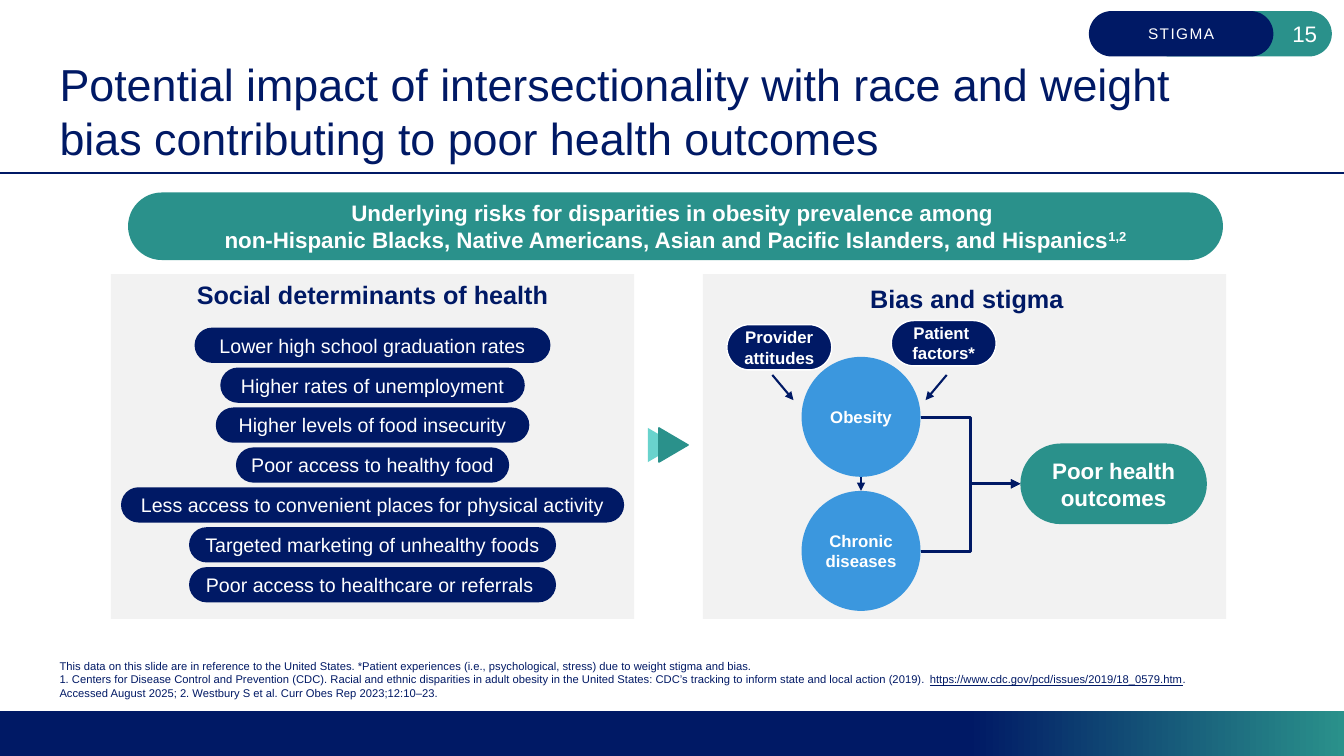
import pptx
import pptx.util
import pptx.dml.color
import pptx.enum.shapes
import pptx.enum.text
import pptx.oxml
import pptx.oxml.ns

RGBColor = pptx.dml.color.RGBColor
SHAPE = pptx.enum.shapes.MSO_SHAPE
LINE = pptx.enum.shapes.MSO_CONNECTOR
ALIGN = pptx.enum.text.PP_ALIGN
ANCHOR = pptx.enum.text.MSO_ANCHOR
Inches = pptx.util.Inches
Pt = pptx.util.Pt

NAVY = RGBColor(0x00, 0x19, 0x65)
TEAL = RGBColor(0x2A, 0x91, 0x8B)
AQUA = RGBColor(0x69, 0xD3, 0xCD)
BLUE = RGBColor(0x3B, 0x97, 0xDE)
GREY = RGBColor(0xF2, 0xF2, 0xF2)
WHITE = RGBColor(0xFF, 0xFF, 0xFF)

W, H = 13.33, 7.5
MARGIN = 0.59
PANEL_W, PANEL_H, PANEL_TOP = 5.19, 3.42, 2.72

DETERMINANTS = [
    ("Lower high school graduation rates", 3.53),
    ("Higher rates of unemployment", 3.02),
    ("Higher levels of food insecurity", 3.11),
    ("Poor access to healthy food", 2.71),
    ("Less access to convenient places for physical activity", 4.99),
    ("Targeted marketing of unhealthy foods", 3.64),
    ("Poor access to healthcare or referrals ", 3.64),
]


def inside(box, dx, dy, w, h):
    return box[0] + dx, box[1] + dy, w, h


def place(box):
    return [Inches(v) for v in box]


def format_runs(p, size, color, bold=False):
    for r in p.runs:
        r.font.name = "Arial"
        r.font.size = Pt(size)
        r.font.color.rgb = color
        r.font.bold = bold


def set_frame(tf, anchor, margins):
    tf.word_wrap = True
    tf.auto_size = pptx.enum.text.MSO_AUTO_SIZE.NONE
    tf.vertical_anchor = anchor
    tf.margin_left = tf.margin_right = Inches(margins[0])
    tf.margin_top = tf.margin_bottom = Inches(margins[1])


def add_shape(s, kind, box, fill, line=None):
    sp = s.shapes.add_shape(kind, *place(box))
    sp.shadow.inherit = False
    sp.fill.solid()
    sp.fill.fore_color.rgb = fill
    if line is None:
        sp.line.fill.background()
    else:
        sp.line.color.rgb = line
        sp.line.width = Pt(1)
    if kind == SHAPE.ROUNDED_RECTANGLE:
        sp.adjustments[0] = 0.5
    return sp


def add_label(s, kind, box, fill, text, size, bold=False, margins=(0.1, 0.05),
              align=ALIGN.CENTER, line=None):
    sp = add_shape(s, kind, box, fill, line)
    set_frame(sp.text_frame, ANCHOR.MIDDLE, margins)
    p = sp.text_frame.paragraphs[0]
    p.text = text
    p.alignment = align
    format_runs(p, size, WHITE, bold)
    return sp


def add_heading(s, box, text):
    sp = s.shapes.add_textbox(*place(box))
    set_frame(sp.text_frame, ANCHOR.TOP, (0.1, 0.05))
    p = sp.text_frame.paragraphs[0]
    p.text = text
    p.alignment = ALIGN.CENTER
    format_runs(p, 18, NAVY, True)


def add_line(s, start, end, width, kind=LINE.STRAIGHT, arrow=True):
    cx = s.shapes.add_connector(kind, *place(start + end))
    cx.line.color.rgb = NAVY
    cx.line.width = Pt(width)
    if arrow:
        tail = pptx.oxml.ns.qn("a:tailEnd")
        ln = cx.line._get_or_add_ln()
        ln.append(ln.makeelement(tail, {"type": "triangle"}))
    sp_pr = cx._element.spPr
    sp_pr.append(sp_pr.makeelement(pptx.oxml.ns.qn("a:effectLst"), {}))
    return cx


def add_frame(s):
    band = add_shape(s, SHAPE.RECTANGLE, (0, 0.94 * H, W, 0.06 * H), NAVY)
    band.fill.gradient()
    band.fill.gradient_angle = 0
    for stop, position, color in zip(band.fill.gradient_stops, (0.72, 1), (NAVY, TEAL)):
        stop.position = position
        stop.color.rgb = color
    add_line(s, (0, 1.72), (W, 1.72), 1.5, arrow=False)


def add_section_tag(s, box):
    pill = SHAPE.ROUNDED_RECTANGLE
    add_label(s, pill, inside(box, 0.58, 0, 1.83, box[3]), TEAL, "15", 16,
              margins=(0.08, 0.04), align=ALIGN.RIGHT)
    tag = add_label(s, pill, inside(box, 0, 0, 1.83, box[3]), NAVY, "STIGMA", 11,
                    margins=(0.08, 0.04))
    tag.text_frame.paragraphs[0].runs[0].font._element.set("spc", "100")


def add_title(s, box):
    sp = s.shapes.title
    sp.left, sp.top, sp.width, sp.height = place(box)
    set_frame(sp.text_frame, ANCHOR.BOTTOM, (0, 0))
    p = sp.text_frame.paragraphs[0]
    p.text = ("Potential impact of intersectionality with race and weight "
              "bias contributing to poor health outcomes")
    p.alignment = ALIGN.LEFT
    format_runs(p, 32, NAVY)


def add_banner(s, box):
    sp = add_label(s, SHAPE.ROUNDED_RECTANGLE, box, TEAL,
                   "Underlying risks for disparities in obesity prevalence among \v"
                   "non-Hispanic Blacks, Native Americans, Asian and Pacific Islanders, "
                   "and Hispanics", 16, True, (0.08, 0.04))
    p = sp.text_frame.paragraphs[0]
    r = p.add_run()
    r.text = "1,2"
    format_runs(p, 16, WHITE, True)
    r.font._element.set("baseline", "30000")


def add_determinants(s, box):
    add_shape(s, SHAPE.RECTANGLE, box, GREY)
    add_heading(s, inside(box, 0, 0, box[2], 0.4), "Social determinants of health")
    for i, (text, w) in enumerate(DETERMINANTS):
        add_label(s, SHAPE.ROUNDED_RECTANGLE,
                  inside(box, (box[2] - w) / 2, 0.53 + i * 0.396, w, 0.35),
                  NAVY, text, 14, margins=(0.1, 0))


def add_step_arrow(s, box):
    for dx, fill, line in ((0, AQUA, None), (0.11, TEAL, TEAL)):
        sp = add_shape(s, SHAPE.ISOSCELES_TRIANGLE, inside(box, dx, 0, 0.34, 0.29),
                       fill, line)
        sp.rotation = 90


def add_bias(s, box):
    x, y = box[:2]
    pill = SHAPE.ROUNDED_RECTANGLE
    add_shape(s, SHAPE.RECTANGLE, box, GREY)
    add_heading(s, inside(box, 0.24, 0.04, 4.76, 0.4), "Bias and stigma")
    outcome = add_label(s, pill, inside(box, 3.15, 1.68, 1.85, 0.8), TEAL,
                        "Poor health outcomes", 16, True)
    for text, dy in (("Obesity", 0.82), ("Chronic diseases", 2.15)):
        add_label(s, SHAPE.OVAL, inside(box, 0.98, dy, 1.18, 1.19), BLUE, text, 12,
                  True, (0, 0))
        cx = add_line(s, (x + 2.16, y + dy + 0.6), (x + 3.15, y + 2.08), 2.25, LINE.ELBOW)
        cx.end_connect(outcome, 1)
    for text, dx, dy in (("Provider attitudes", 0.24, 0.5), ("Patient \vfactors*", 1.87, 0.46)):
        add_label(s, pill, inside(box, dx, dy, 1.04, 0.45), NAVY, text, 12, True, line=WHITE)
    for x1, y1, x2, y2 in ((1.57, 2.01, 1.57, 2.15), (0.69, 1, 0.9, 1.25),
                           (2.42, 1, 2.21, 1.25)):
        add_line(s, (x + x1, y + y1), (x + x2, y + y2), 1.5)


def add_footnote(s, box):
    sp = s.shapes.add_textbox(*place(box))
    set_frame(sp.text_frame, ANCHOR.BOTTOM, (0, 0))
    p = sp.text_frame.paragraphs[0]
    p.text = ("This data on this slide are in reference to the United States. *Patient "
              "experiences (i.e., psychological, stress) due to weight stigma and bias.\v"
              "1. Centers for Disease Control and Prevention (CDC). Racial and ethnic "
              "disparities in adult obesity in the United States: CDC’s tracking to inform "
              "state and local action (2019). ")
    link = p.add_run()
    link.text = "https://www.cdc.gov/pcd/issues/2019/18_0579.htm"
    link.font.underline = True
    p.add_run().text = ". "
    p.add_line_break()
    p.add_run().text = "Accessed August 2025; 2. Westbury S et al. Curr Obes Rep 2023;12:10–23."
    format_runs(p, 8, NAVY)


def main():
    prs = pptx.Presentation()
    prs.slide_width, prs.slide_height = Inches(W), Inches(H)
    s = prs.slides.add_slide(prs.slide_layouts[5])
    add_frame(s)
    add_section_tag(s, (10.8, 0.11, 2.41, 0.45))
    add_title(s, (MARGIN, 0.45, 11.92, 1.18))
    add_banner(s, (1.27, 1.91, 10.86, 0.67))
    add_determinants(s, (1.1, PANEL_TOP, PANEL_W, PANEL_H))
    add_step_arrow(s, (6.4, 4.27, 0.45, 0.29))
    add_bias(s, (6.97, PANEL_TOP, PANEL_W, PANEL_H))
    add_footnote(s, (MARGIN, 6.37, 11.92, 0.57))
    prs.save("out.pptx")


if __name__ == "__main__":
    main()
